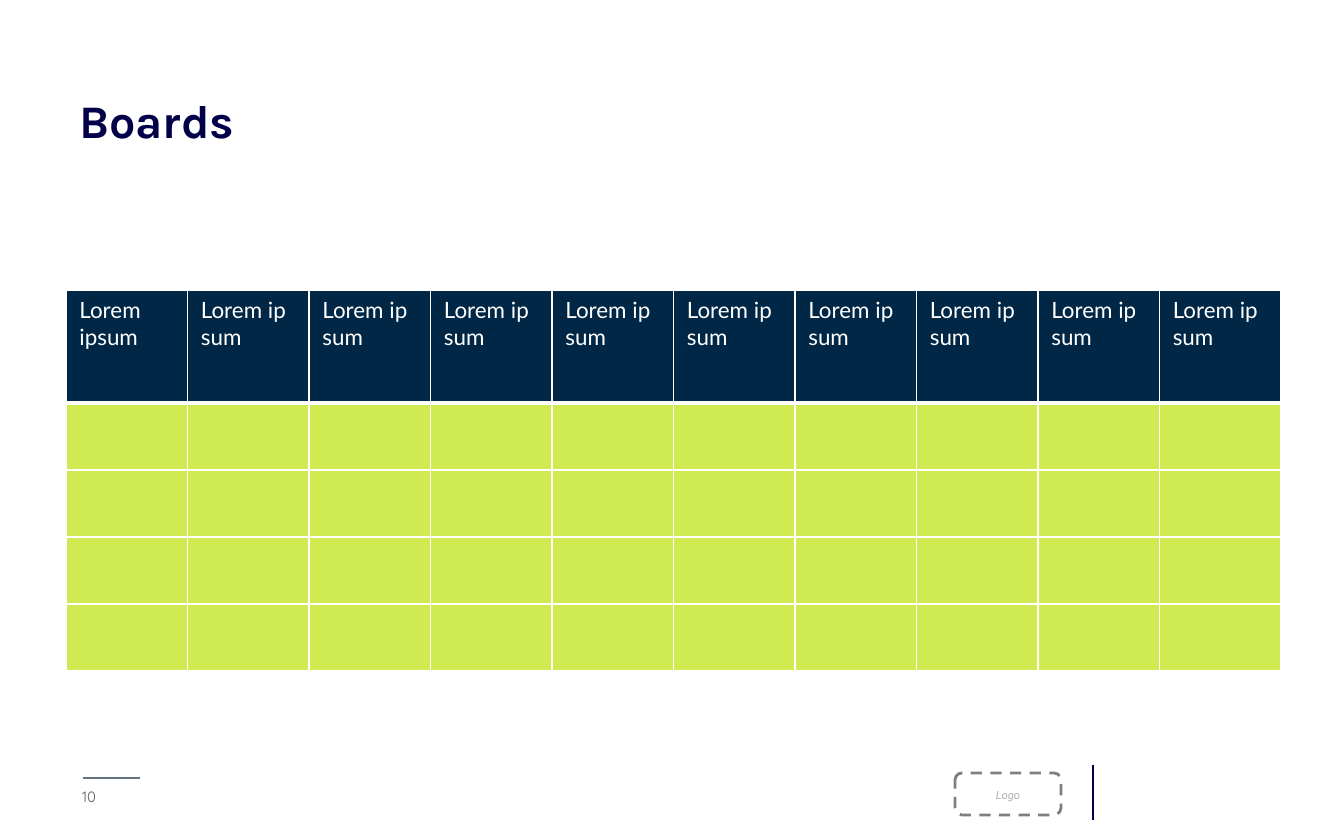
import pptx
import pptx.util
import pptx.dml.color
import pptx.enum.dml
import pptx.enum.shapes
import pptx.enum.text
import pptx.oxml
import pptx.oxml.ns
from lxml import etree

THEME = {
    "navy": "020048", "header": "002745", "lime": "D0EB52", "white": "FFFFFF",
    "rule": "607687", "number": "626262", "dash": "7F7F7F", "logo": "B0B0B0",
    "title_pt": 25, "cell_pt": 12, "number_pt": 8, "logo_pt": 6,
}
SCALE = 914400 / 134.4  # EMU per px


def px(*lengths):
    return [pptx.util.Emu(round(n * SCALE)) for n in lengths]


def add_run(p, text, font, size, color):
    r = p.add_run()
    r.text = text
    r.font.name = font
    r.font.size = pptx.util.Pt(THEME[size])
    r.font.color.rgb = pptx.dml.color.RGBColor.from_string(THEME[color])
    return r


prs = pptx.Presentation()
prs.slide_width, prs.slide_height = px(1344, 840)
s = prs.slides.add_slide(prs.slide_layouts[6])

# Footer: page number, rules and logo placeholder
tf = s.shapes.add_textbox(*px(69, 781, 56, 32)).text_frame
tf.word_wrap = True
add_run(tf.paragraphs[0], "10", "Quicksand", "number_pt", "number")

for x1, y1, x2, y2, color in [(83, 778, 140, 778, "rule"), (1093, 765, 1093, 820, "navy")]:
    line = s.shapes.add_connector(pptx.enum.shapes.MSO_CONNECTOR.STRAIGHT, *px(x1, y1, x2, y2))
    line.line.color.rgb = pptx.dml.color.RGBColor.from_string(THEME[color])
    line.line.width = pptx.util.Pt(0.75)
    etree.SubElement(line.element.spPr, pptx.oxml.ns.qn("a:effectLst"))

logo = s.shapes.add_shape(pptx.enum.shapes.MSO_SHAPE.ROUNDED_RECTANGLE, *px(955, 773, 106, 42))
logo.shadow.inherit = False
logo.fill.background()
logo.line.color.rgb = pptx.dml.color.RGBColor.from_string(THEME["dash"])
logo.line.width = pptx.util.Pt(1.5)
logo.line.dash_style = pptx.enum.dml.MSO_LINE.DASH
tf = logo.text_frame
tf.vertical_anchor = pptx.enum.text.MSO_ANCHOR.MIDDLE
tf.margin_top, tf.margin_bottom = px(2, 0)
p = tf.paragraphs[0]
p.alignment = pptx.enum.text.PP_ALIGN.CENTER
add_run(p, "Logo", "Roboto", "logo_pt", "logo").font.italic = True

# Title
tf = s.shapes.add_textbox(*px(66, 79, 445, 114)).text_frame
tf.word_wrap = True
tf.margin_top, tf.margin_bottom = px(13, 13)
add_run(tf.paragraphs[0], "Boards", "Karla", "title_pt", "navy").font.bold = True

# Board
ROWS, COLS = 5, 10
table = s.shapes.add_table(ROWS, COLS, *px(66, 290, 1215, 381)).table
for i, row in enumerate(table.rows):
    row.height = px(67 if i else 113)[0]
    for j, cell in enumerate(row.cells):
        cell.fill.solid()
        cell.fill.fore_color.rgb = pptx.dml.color.RGBColor.from_string(
            THEME["lime" if i else "header"])
        if i == 0:
            text = "Lorem\u00a0ipsum" if j else "Lorem ipsum"
            add_run(cell.text_frame.paragraphs[0], text, "Lato", "cell_pt", "white")
        # Borders come before the fill in tcPr; the header edge is thicker
        for k, side in enumerate(["lnL", "lnR", "lnT", "lnB"]):
            thick = (i, side) in [(0, "lnB"), (1, "lnT")]
            border = pptx.oxml.parse_xml(
                f'<a:{side} {pptx.oxml.ns.nsdecls("a")} w="{pptx.util.Pt(3 if thick else 1)}">'
                f'<a:solidFill><a:srgbClr val="{THEME["white"]}"/></a:solidFill></a:{side}>')
            cell._tc.get_or_add_tcPr().insert(k, border)

prs.save("out.pptx")
